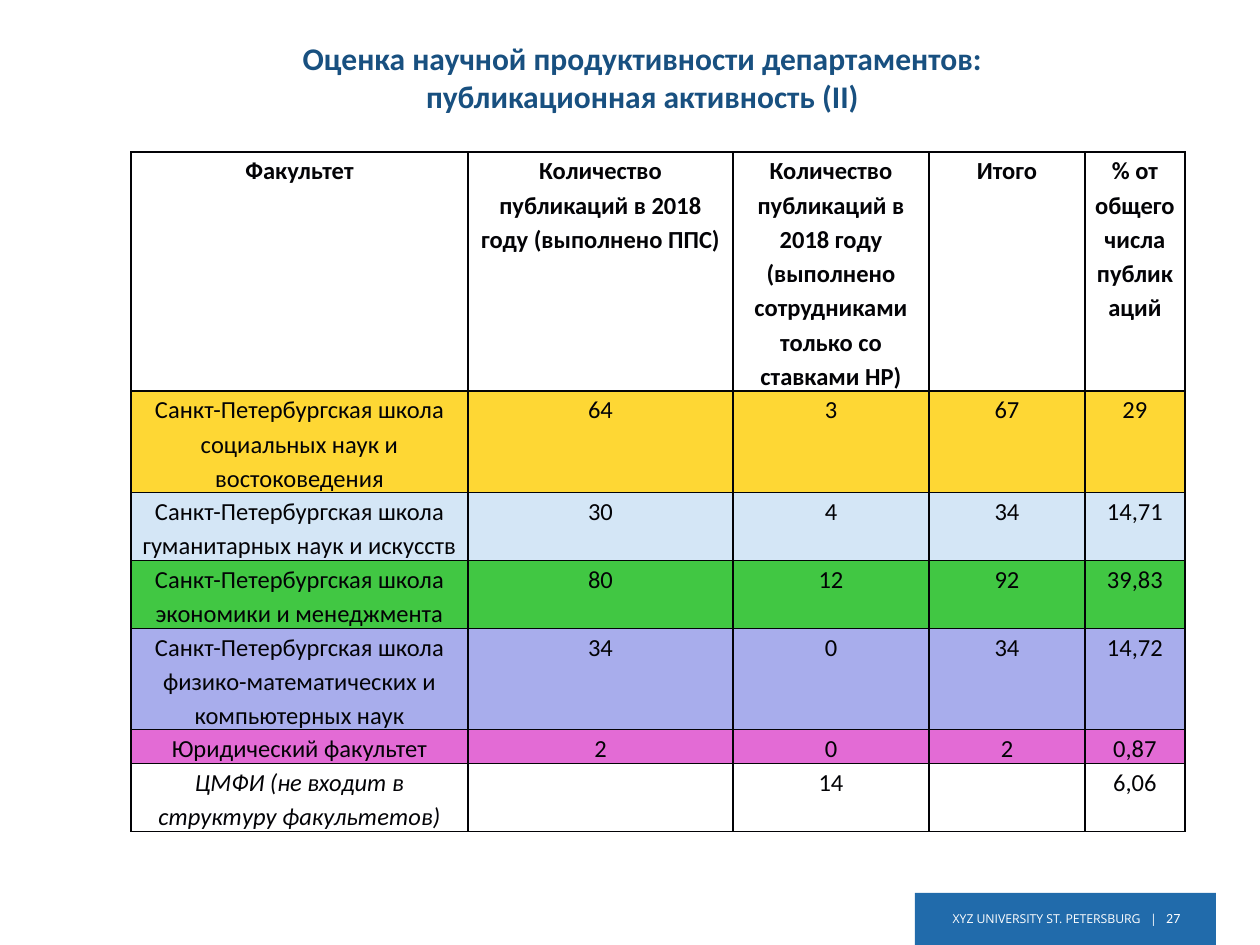
from lxml import etree
from pptx import Presentation
from pptx import util as u
from pptx.dml.color import RGBColor
from pptx.enum import shapes, text
from pptx.oxml import parse_xml
from pptx.oxml.ns import nsdecls

PX = u.Inches(1) / 126
C = {"title": "185080", "footer": "216BAB", "white": "FFFFFF", "ink": "030306",
     "yellow": "FED734", "sky": "D4E6F6", "green": "41C743",
     "lilac": "A8ADEC", "pink": "E36BD5"}


def px(n):
    return u.Emu(round(n * PX))


def add_run(p, content, size=14, color="ink", font="Calibri", bold=False, italic=False,
            align=text.PP_ALIGN.CENTER, spacing=None):
    p.alignment = align
    if spacing:
        p.line_spacing = spacing
    r = p.add_run()
    r.text = content
    r.font.size, r.font.name = u.Pt(size), font
    r.font.bold, r.font.italic = bold, italic
    r.font.color.rgb = RGBColor.from_string(C[color])


prs = Presentation()
prs.slide_width, prs.slide_height = px(1260), px(945)
s = prs.slides.add_slide(prs.slide_layouts[6])

# Footer
sp = s.shapes.add_shape(shapes.MSO_SHAPE.RECTANGLE, px(915), px(893), px(301), px(53))
sp.shadow.inherit = False
sp.fill.solid()
sp.fill.fore_color.rgb = RGBColor.from_string(C["footer"])
sp.line.fill.background()

tf = s.shapes.add_textbox(px(914), px(908), px(279), px(25)).text_frame
tf.word_wrap = False
tf.vertical_anchor = text.MSO_ANCHOR.MIDDLE
for content, size, font in [("XYZ UNIVERSITY ST. PETERSBURG   |   ", 7, "Open Sans"),
                            ("27", 8, "Calibri")]:
    add_run(tf.paragraphs[0], content, size=size, font=font, color="white",
            align=text.PP_ALIGN.RIGHT, spacing=0.7)

# Title
tf = s.shapes.add_textbox(px(14), px(33), px(1257), px(89)).text_frame
tf.word_wrap = True
add_run(tf.paragraphs[0], "Оценка научной продуктивности департаментов:",
        size=18, color="title", bold=True)
add_run(tf.add_paragraph(), "публикационная активность (II)",
        size=18, color="title", bold=True)

# Table: row height, fill, cell texts
rows = [
    (239, "white", ["Факультет", "Количество публикаций в 2018 году (выполнено ППС)",
                    "Количество публикаций в 2018 году (выполнено сотрудниками "
                    "только со ставками НР)",
                    "Итого", "% от общего числа публикаций"]),
    (101, "yellow", ["Санкт-Петербургская школа социальных наук и востоковедения",
                     "64", "3", "67", "29"]),
    (68, "sky", ["Санкт-Петербургская школа гуманитарных наук и искусств",
                 "30", "4", "34", "14,71"]),
    (68, "green", ["Санкт-Петербургская школа экономики и менеджмента",
                   "80", "12", "92", "39,83"]),
    (101, "lilac", ["Санкт-Петербургская школа физико-математических и компьютерных наук",
                    "34", "0", "34", "14,72"]),
    (34, "pink", ["Юридический факультет", "2", "0", "2", "0,87"]),
    (68, "white", ["ЦМФИ (не входит в структуру факультетов)", "", "14", "", "6,06"]),
]
widths = [337, 265, 196, 156, 100]
last = len(rows) - 1
table = s.shapes.add_table(len(rows), len(widths), px(131), px(152),
                           px(sum(widths)), px(sum(h for h, *_ in rows))).table
for col, width in zip(table.columns, widths):
    col.width = px(width)
for i, (height, fill, contents) in enumerate(rows):
    table.rows[i].height = px(height)
    for j, content in enumerate(contents):
        cell = table.cell(i, j)
        cell.margin_left = cell.margin_right = px(8)
        cell.margin_top = cell.margin_bottom = 0
        tcPr = cell._tc.get_or_add_tcPr()
        for side in "LRTB":
            tcPr.append(parse_xml(
                f'<a:ln{side} {nsdecls("a")} w="12700"><a:solidFill>'
                f'<a:srgbClr val="{C["ink"]}"/></a:solidFill></a:ln{side}>'))
        cell.fill.solid()
        cell.fill.fore_color.rgb = RGBColor.from_string(C[fill])
        if content:
            add_run(cell.text_frame.paragraphs[0], content, bold=i == 0,
                    italic=i == last and j == 0, spacing=1.15)

prs.save("out.pptx")
